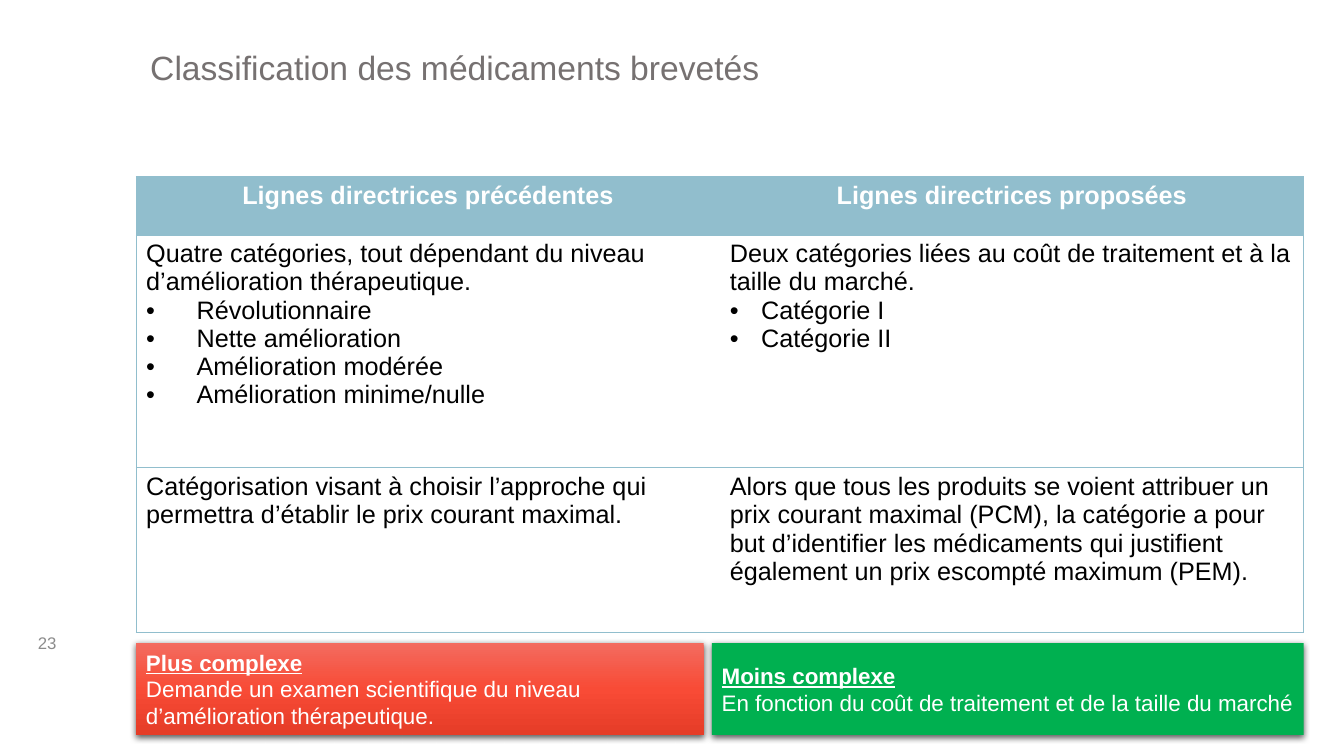
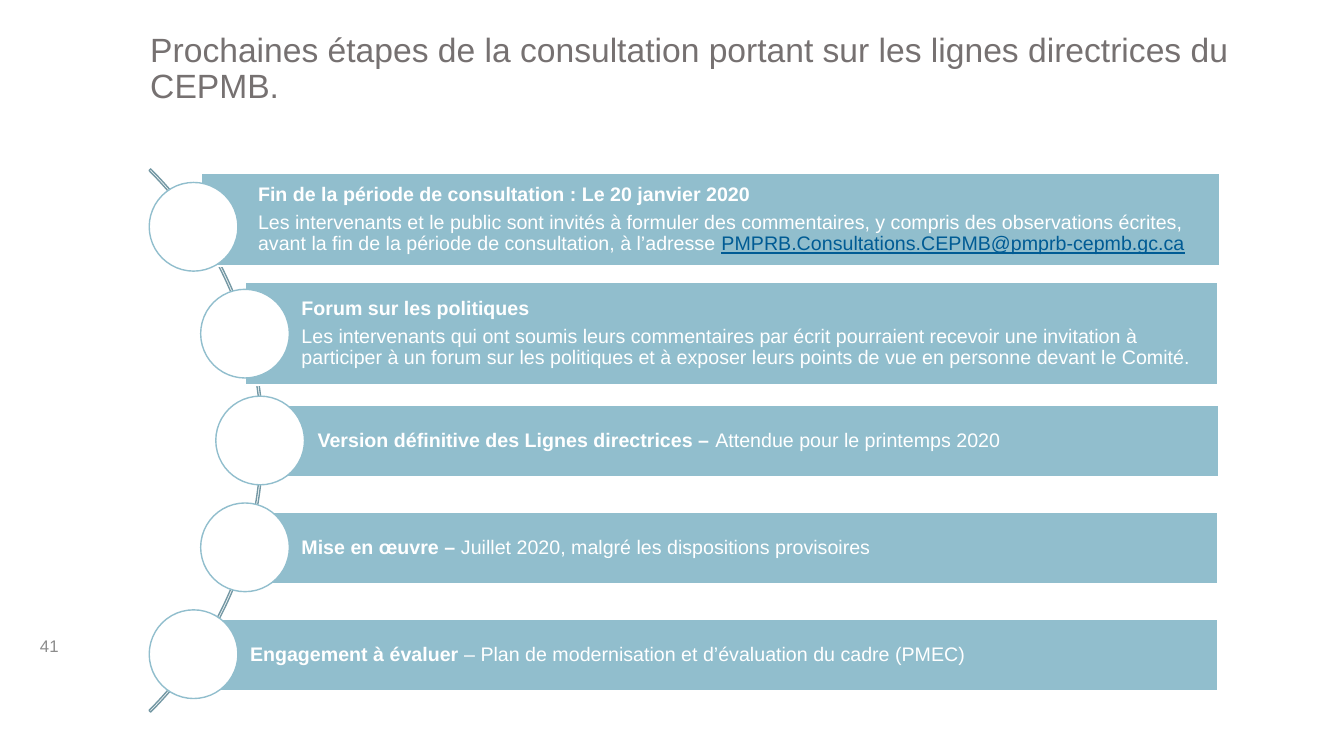
"""Build two slides on the drug price guidelines: a comparison and the next steps."""
from copy import deepcopy
from dataclasses import dataclass, field

from lxml import etree
from pptx import Presentation
from pptx import util as u
from pptx.dml.color import RGBColor
from pptx.enum import shapes, text
from pptx.oxml.ns import qn

FONT = "Arial"
BLUE, ARC_BLUE, LINK_BLUE = "91BECD", "7498A4", "005B94"
WHITE, BLACK, TITLE_GREY, NUMBER_GREY = "FFFFFF", "000000", "767171", "8C8C8C"
GREEN = "00B050"
RED_STOPS = ((0, "F36B5F"), (0.5, "F84B36"), (1, "E53C27"))
TITLE_ONLY = 5
MIDDLE = text.MSO_ANCHOR.MIDDLE
BOLD, UNDERLINED = {"bold": True}, {"bold": True, "underline": True}


@dataclass
class Run:
    """A stretch of text with its own formatting."""
    words: str
    style: dict = field(default_factory=dict)
    color: str = ""


@dataclass
class Line:
    """A paragraph made of runs, with a hanging bullet if indent is set."""
    runs: list[Run]
    indent: float = 0


@dataclass
class TextStyle:
    """The look shared by all paragraphs of a box."""
    size: float
    color: str
    paragraph: dict = field(default_factory=dict)


@dataclass
class Box:
    """A position and size in inches."""
    left: float
    top: float
    width: float
    height: float

    def lengths(self) -> list[u.Length]:
        """Return left, top, width and height as lengths."""
        return [u.Inches(v) for v in (self.left, self.top, self.width, self.height)]


@dataclass
class Step:
    """A bar of the timeline and the left edge of its circle."""
    circle_left: float
    bar: Box
    lines: list[Line]


@dataclass
class Callout:
    """A shadowed box under the table."""
    box: Box
    heading: str
    words: str
    stops: tuple


TITLE_BOX = Box(1.39, 0.21, 11.34, 0.96)
TITLE_STYLE = TextStyle(24, TITLE_GREY, {"line_spacing": 0.9, "alignment": text.PP_ALIGN.LEFT})
NUMBER_STYLE = TextStyle(12, NUMBER_GREY, {"alignment": text.PP_ALIGN.RIGHT})
HEADER_STYLE = TextStyle(18, WHITE, {"alignment": text.PP_ALIGN.CENTER})
CELL_STYLE = TextStyle(18, BLACK)
CALLOUT_STYLE = TextStyle(16, WHITE, {"alignment": text.PP_ALIGN.LEFT})
STEP_STYLE = TextStyle(14, WHITE, {"alignment": text.PP_ALIGN.LEFT, "line_spacing": 0.9,
                                   "space_after": u.Pt(5)})

TABLE_BOX = Box(1.35, 1.75, 11.58, 4.52)
ROW_HEIGHTS = (0.58, 2.31, 1.63)


def plain(words: str, indent: float = 0) -> Line:
    """Return a paragraph of one unformatted run."""
    return Line([Run(words)], indent)


def bold(words: str, rest: str = "") -> Line:
    """Return a paragraph that opens in bold."""
    return Line([Run(words, BOLD)] + ([Run(rest)] if rest else []))


ROWS = (
    ([bold("Lignes directrices précédentes")], [bold("Lignes directrices proposées")]),
    ([plain("Quatre catégories, tout dépendant du niveau d’amélioration thérapeutique."),
      *(plain(words, 0.5) for words in ("Révolutionnaire", "Nette amélioration",
                                        "Amélioration modérée", "Amélioration minime/nulle"))],
     [plain("Deux catégories liées au coût de traitement et à la taille du marché."),
      *(plain(words, 0.31) for words in ("Catégorie I", "Catégorie II"))]),
    ([plain("Catégorisation visant à choisir l’approche qui permettra d’établir le prix "
            "courant maximal.")],
     [plain("Alors que tous les produits se voient attribuer un prix courant maximal (PCM), "
            "la catégorie a pour but d’identifier les médicaments qui justifient également "
            "un prix escompté maximum (PEM).")]),
)

CALLOUTS = (
    Callout(Box(1.35, 6.38, 5.63, 0.91), "Plus complexe",
            "Demande un examen scientifique du niveau d’amélioration thérapeutique.", RED_STOPS),
    Callout(Box(7.06, 6.38, 5.87, 0.91), "Moins complexe",
            "En fonction du coût de traitement et de la taille du marché", ((0, GREEN),)),
)

ARC_BOX = Box(-5.01, 0.56, 7.62, 7.62)
ARC_ADJUSTMENTS = (189, 27, 0.003)
CIRCLE_TOP, CIRCLE_PITCH, CIRCLE_SIZE = 1.81, 1.06, 0.88
STEPS = (
    Step(1.48, Box(2, 1.72, 10.1, 0.92), [
        bold("Fin de la période de consultation : Le 20 janvier 2020"),
        Line([Run("Les intervenants et le public sont invités à formuler des commentaires, "
                  "y compris des observations écrites, avant la fin de la période de "
                  "consultation, à l’adresse "),
              Run("PMPRB.Consultations.CEPMB@pmprb-cepmb.gc.ca", {"underline": True},
                  LINK_BLUE)])]),
    Step(1.99, Box(2.43, 2.8, 9.65, 1.02), [
        bold("Forum sur les politiques"),
        plain("Les intervenants qui ont soumis leurs commentaires par écrit pourraient "
              "recevoir une invitation à participer à un forum sur les politiques et à "
              "exposer leurs points de vue en personne devant le Comité.")]),
    Step(2.14, Box(2.59, 4.02, 9.5, 0.71), [
        bold("Version définitive des Lignes directrices – ", "Attendue pour le printemps 2020")]),
    Step(1.99, Box(2.43, 5.08, 9.65, 0.71), [
        bold("Mise en œuvre – ", "Juillet 2020, malgré les dispositions provisoires")]),
    Step(1.48, Box(1.92, 6.14, 10.16, 0.71), [
        bold("Engagement à évaluer ",
             "– Plan de modernisation et d’évaluation du cadre (PMEC)")]),
)


def rgb(color: str) -> RGBColor:
    """Turn a hex string into a colour."""
    return RGBColor.from_string(color)


def set_values(target, values: dict) -> None:
    """Set each named attribute of the target."""
    for name, value in values.items():
        setattr(target, name, value)


def add_bullet(paragraph, indent: float) -> None:
    """Give a paragraph a hanging bullet."""
    properties = paragraph._p.get_or_add_pPr()
    properties.set("marL", str(u.Inches(indent)))
    properties.set("indent", str(-u.Inches(indent)))
    etree.SubElement(properties, qn("a:buFont"), typeface=FONT)
    etree.SubElement(properties, qn("a:buChar"), char="•")


def write(frame, lines: list[Line], style: TextStyle) -> None:
    """Fill a text frame with formatted paragraphs."""
    frame.word_wrap = True
    for index, line in enumerate(lines):
        paragraph = frame.add_paragraph() if index else frame.paragraphs[0]
        if line.indent:
            add_bullet(paragraph, line.indent)
        set_values(paragraph, style.paragraph)
        for part in line.runs:
            run = paragraph.add_run()
            run.text = part.words
            set_values(run.font, {"name": FONT, "size": u.Pt(style.size), "bold": False,
                                  **part.style})
            run.font.color.rgb = rgb(part.color or style.color)


def add_shape(slide, kind, box: Box, fill: str = "", line: str = ""):
    """Add a preset shape without shadow; an empty colour means none."""
    shape = slide.shapes.add_shape(kind, *box.lengths())
    shape.shadow.inherit = False
    if fill:
        shape.fill.solid()
        shape.fill.fore_color.rgb = rgb(fill)
    else:
        shape.fill.background()
    if line:
        shape.line.color.rgb = rgb(line)
        shape.line.width = u.Pt(1)
    else:
        shape.line.fill.background()
    return shape


def add_slide(presentation, title: str, number: str, number_box: Box):
    """Add a slide with its title and page number."""
    slide = presentation.slides.add_slide(presentation.slide_layouts[TITLE_ONLY])
    heading = slide.shapes.title
    set_values(heading, dict(zip(("left", "top", "width", "height"), TITLE_BOX.lengths())))
    number_text = slide.shapes.add_textbox(*number_box.lengths())
    for shape, words, style in ((heading, title, TITLE_STYLE),
                                (number_text, number, NUMBER_STYLE)):
        shape.text_frame.vertical_anchor = MIDDLE
        write(shape.text_frame, [plain(words)], style)
    return slide


def set_borders(cell, visible: dict[str, bool]) -> None:
    """Draw or hide each edge of a table cell."""
    properties = cell._tc.get_or_add_tcPr()
    for edge, shown in visible.items():
        line = etree.SubElement(properties, qn(f"a:{edge}"), w=str(u.Pt(0.5)))
        if shown:
            fill = etree.SubElement(line, qn("a:solidFill"))
            etree.SubElement(fill, qn("a:srgbClr"), val=BLUE)
        else:
            etree.SubElement(line, qn("a:noFill"))


def add_comparison(slide) -> None:
    """Add the table of previous and proposed guidelines."""
    columns = len(ROWS[0])
    table = slide.shapes.add_table(len(ROWS), columns, *TABLE_BOX.lengths()).table
    table.horz_banding = False
    for column in table.columns:
        column.width = u.Inches(TABLE_BOX.width / columns)
    for i, (height, row) in enumerate(zip(ROW_HEIGHTS, ROWS)):
        table.rows[i].height = u.Inches(height)
        for j, lines in enumerate(row):
            cell = table.cell(i, j)
            set_borders(cell, {"lnL": j == 0, "lnR": j == columns - 1, "lnT": True, "lnB": True})
            cell.fill.solid()
            cell.fill.fore_color.rgb = rgb(WHITE if i else BLUE)
            write(cell.text_frame, lines, CELL_STYLE if i else HEADER_STYLE)


def set_gradient(shape, stops: tuple) -> None:
    """Fill a shape from top to bottom through the colour stops."""
    shape.fill.gradient()
    shape.fill.gradient_angle = 270
    stop_list = shape._element.spPr.find(qn("a:gradFill")).find(qn("a:gsLst"))
    while len(stop_list) < len(stops):
        stop_list.append(deepcopy(stop_list[0]))
    for stop, (position, color) in zip(shape.fill.gradient_stops, stops):
        stop.position = position
        stop.color.rgb = rgb(color)


def add_shadow(shape) -> None:
    """Give a shape a soft shadow below."""
    effects = shape._element.spPr.find(qn("a:effectLst"))
    shadow = etree.SubElement(effects, qn("a:outerShdw"), blurRad=str(u.Pt(4.5)),
                              dist=str(u.Pt(1.5)), dir="5400000", rotWithShape="0")
    color = etree.SubElement(shadow, qn("a:srgbClr"), val=BLACK)
    etree.SubElement(color, qn("a:alpha"), val="63000")


def add_callout(slide, callout: Callout) -> None:
    """Add a callout with an underlined heading."""
    shape = add_shape(slide, shapes.MSO_SHAPE.RECTANGLE, callout.box, callout.stops[0][1])
    if len(callout.stops) > 1:
        set_gradient(shape, callout.stops)
    add_shadow(shape)
    shape.text_frame.vertical_anchor = MIDDLE
    write(shape.text_frame, [Line([Run(callout.heading, UNDERLINED)]), plain(callout.words)],
          CALLOUT_STYLE)


def add_timeline(slide) -> None:
    """Add the arc with its bars and circles."""
    arc = add_shape(slide, shapes.MSO_SHAPE.BLOCK_ARC, ARC_BOX, line=ARC_BLUE)
    for index, value in enumerate(ARC_ADJUSTMENTS):
        arc.adjustments[index] = value
    inset = u.Inches(0.04)
    for index, step in enumerate(STEPS):
        bar = add_shape(slide, shapes.MSO_SHAPE.RECTANGLE, step.bar, BLUE, WHITE)
        set_values(bar.text_frame, {"margin_left": u.Inches(0.56), "margin_right": inset,
                                    "margin_top": inset, "margin_bottom": inset,
                                    "vertical_anchor": MIDDLE})
        write(bar.text_frame, step.lines, STEP_STYLE)
        circle = Box(step.circle_left, CIRCLE_TOP + index * CIRCLE_PITCH, CIRCLE_SIZE, CIRCLE_SIZE)
        add_shape(slide, shapes.MSO_SHAPE.OVAL, circle, WHITE, BLUE)


def main() -> None:
    """Build and save the presentation."""
    presentation = Presentation()
    presentation.slide_width, presentation.slide_height = u.Inches(13.33), u.Inches(7.5)
    comparison = add_slide(presentation, "Classification des médicaments brevetés", "23",
                           Box(0.13, 6.18, 0.53, 0.4))
    add_comparison(comparison)
    for callout in CALLOUTS:
        add_callout(comparison, callout)
    next_steps = add_slide(
        presentation, "Prochaines étapes de la consultation portant sur les lignes directrices "
        "du CEPMB.", "41", Box(0.15, 6.21, 0.53, 0.4))
    add_timeline(next_steps)
    presentation.save("out.pptx")


if __name__ == "__main__":
    main()
